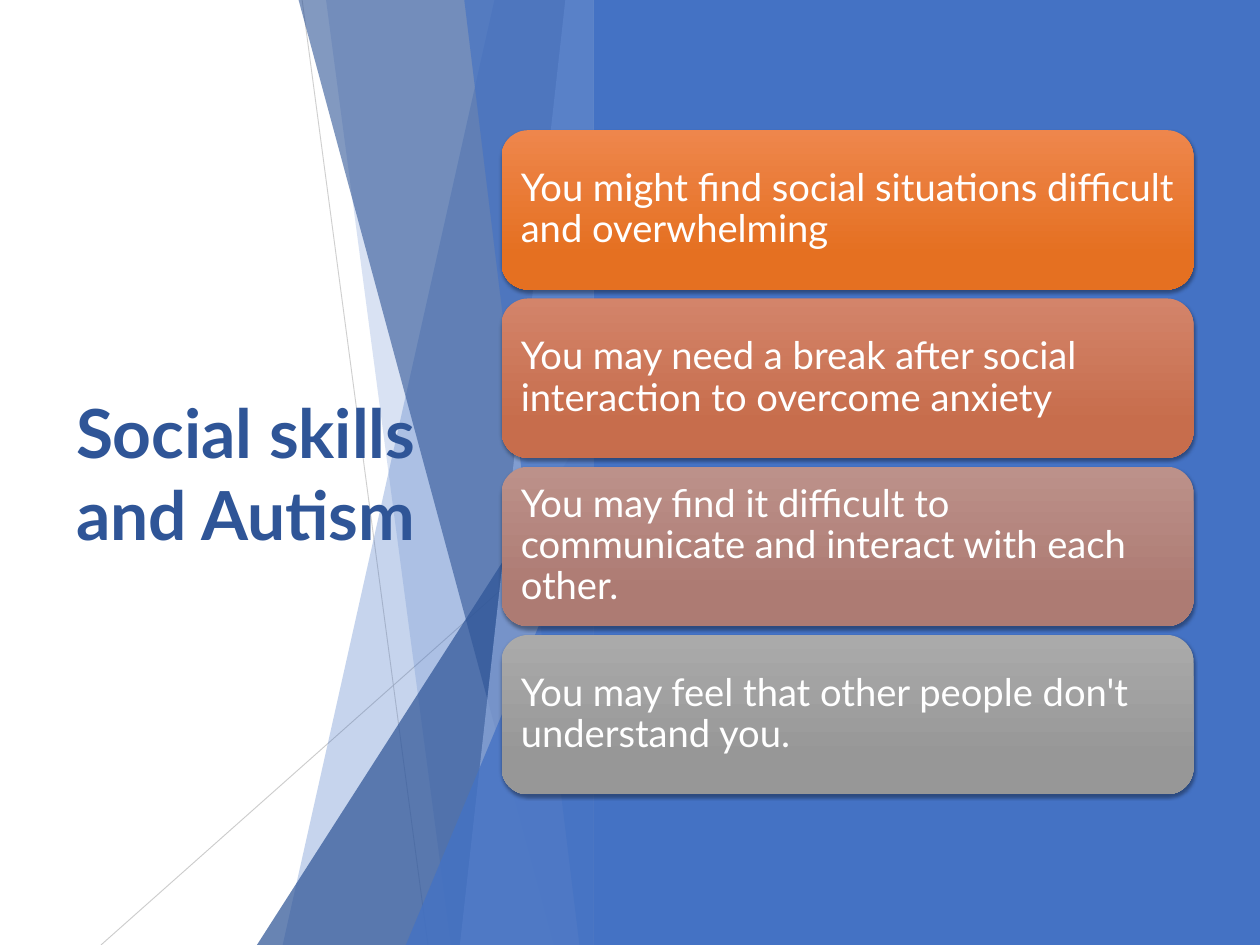
from lxml import etree
from pptx import Presentation
from pptx.dml.color import RGBColor
from pptx.enum.shapes import MSO_CONNECTOR, MSO_SHAPE
from pptx.enum.text import MSO_ANCHOR, PP_ALIGN
from pptx.oxml.ns import qn
from pptx.util import Inches, Pt

STRAIGHT = MSO_CONNECTOR.STRAIGHT
RECT = MSO_SHAPE.RECTANGLE
ROUNDED = MSO_SHAPE.ROUNDED_RECTANGLE
TRIANGLE = MSO_SHAPE.ISOSCELES_TRIANGLE
MIDDLE = MSO_ANCHOR.MIDDLE
LEFT = PP_ALIGN.LEFT

WIDTH, HEIGHT = 14.22, 10.67
PANEL_LEFT = 6.7
BLUE, NAVY, SKY, SILVER, WHITE = "4472C4", "2F5597", "8FAADC", "BFBFBF", "FFFFFF"

RAYS = [
    ((3.41, 0), (4.83, HEIGHT), 75),
    ((PANEL_LEFT, 5.73), (1.14, HEIGHT), 80),
]
BACK_BANDS = [(5.58, 3.19, BLUE, 30), (3.68, 5.09, BLUE, 20)]
FRONT_BANDS = [
    (3.37, 6.25, NAVY, 60),
    (6.38, 5.19, SKY, 70),
    (5.24, 6.54, BLUE, 65),
]
CARD_LEFT, CARD_TOP, CARD_WIDTH, CARD_HEIGHT, CARD_PITCH = 5.66, 1.47, 7.81, 1.8, 1.9
CARDS = [
    ("You might find social situations difficult and overwhelming", "EE864C", "E57021"),
    ("You may need a break after social interaction to overcome anxiety", "D3846A", "C76D4C"),
    ("You may find it difficult to communicate and interact with each other.", "BC918A", "AD7B73"),
    ("You may feel that other people don't understand you.", "AAAAAA", "979797"),
]
TITLE_FONT = {"name": "Lato", "size": Pt(55), "bold": True}
CARD_FONT = {"name": "Lato", "size": Pt(31)}
CARD_MARGINS = {f"margin_{side}": Inches(0.13) for side in ("left", "top", "right", "bottom")}


def rgb(color):
    """Turn a hex string into a colour."""
    return RGBColor.from_string(color)


def set_attrs(target, values):
    """Set each attribute of the target from a dict."""
    for name, value in values.items():
        setattr(target, name, value)


def set_opacity(color, percent):
    """Give a colour element an opacity."""
    etree.SubElement(color, qn("a:alpha"), val=str(percent * 1000))


def fill_plain(sp, color, opacity=100):
    """Fill a shape with one colour, without outline or shadow."""
    sp.shadow.inherit = False
    sp.line.fill.background()
    sp.fill.solid()
    sp.fill.fore_color.rgb = rgb(color)
    if opacity < 100:
        set_opacity(next(sp._element.iter(qn("a:srgbClr"))), opacity)


def add_ray(s, start, end, opacity):
    """Draw a thin translucent line."""
    line = s.shapes.add_connector(STRAIGHT, *(Inches(v) for v in (*start, *end)))
    line.line.width = Pt(0.75)
    line.line.color.rgb = rgb(SILVER)
    set_opacity(next(line._element.iter(qn("a:srgbClr"))), opacity)
    etree.SubElement(line._element.find(qn("p:spPr")), qn("a:effectLst"))


def add_band(s, top_x, bottom_x, color, opacity):
    """Draw a full-height band from a slanted edge to the panel."""
    points = [(PANEL_LEFT, 0), (PANEL_LEFT, HEIGHT), (bottom_x, HEIGHT)]
    builder = s.shapes.build_freeform(Inches(top_x), 0)
    builder.add_line_segments([(Inches(x), Inches(y)) for x, y in points])
    fill_plain(builder.convert_to_shape(), color, opacity)


def add_wedge(s, left, top, color, opacity):
    """Draw a right triangle standing against the panel."""
    sp = s.shapes.add_shape(TRIANGLE, Inches(left), Inches(top),
                            Inches(PANEL_LEFT - left), Inches(HEIGHT - top))
    sp.adjustments[0] = 1
    fill_plain(sp, color, opacity)


def write(sp, text, font, color, frame, paragraph):
    """Write one formatted paragraph into a shape."""
    tf = sp.text_frame
    set_attrs(tf, {"word_wrap": True, "vertical_anchor": MIDDLE, **frame})
    p = tf.paragraphs[0]
    set_attrs(p, {"alignment": LEFT, **paragraph})
    r = p.add_run()
    r.text = text
    set_attrs(r.font, font)
    r.font.color.rgb = rgb(color)


def add_shadow(sp):
    """Give a shape a soft shadow below it."""
    sp.shadow.inherit = False
    effects = sp._element.spPr.find(qn("a:effectLst"))
    shadow = etree.SubElement(effects, qn("a:outerShdw"), blurRad=str(Pt(3)),
                              dist=str(Pt(2)), dir="5400000", rotWithShape="0")
    set_opacity(etree.SubElement(shadow, qn("a:srgbClr"), val="000000"), 35)


def add_card(s, top, text, light, dark):
    """Draw a rounded gradient card with its text."""
    sp = s.shapes.add_shape(ROUNDED, Inches(CARD_LEFT), Inches(top),
                            Inches(CARD_WIDTH), Inches(CARD_HEIGHT))
    sp.line.fill.background()
    sp.fill.gradient()
    sp.fill.gradient_angle = 270
    for stop, position, color in zip(sp.fill.gradient_stops, (0, 0.78), (light, dark)):
        stop.position = position
        stop.color.rgb = rgb(color)
    add_shadow(sp)
    write(sp, text, CARD_FONT, WHITE, CARD_MARGINS, {"line_spacing": 0.9})


def add_title(s, text):
    """Add the slide title."""
    box = s.shapes.add_textbox(Inches(0.76), Inches(2.15), Inches(4.14), Inches(6.37))
    write(box, text, TITLE_FONT, NAVY, {}, {})


def add_panel(s):
    """Draw the blue panel on the right."""
    sp = s.shapes.add_shape(RECT, Inches(PANEL_LEFT), 0,
                            Inches(WIDTH - PANEL_LEFT), Inches(HEIGHT))
    fill_plain(sp, BLUE)


def main():
    """Build the slide and save it."""
    prs = Presentation()
    prs.slide_width, prs.slide_height = Inches(WIDTH), Inches(HEIGHT)
    s = prs.slides.add_slide(prs.slide_layouts[6])
    for ray in RAYS:
        add_ray(s, *ray)
    for band in BACK_BANDS:
        add_band(s, *band)
    add_wedge(s, 2.9, 4.74, NAVY, 72)
    for band in FRONT_BANDS:
        add_band(s, *band)
    add_wedge(s, 4.58, 5.58, BLUE, 80)
    add_title(s, "Social skills and Autism")
    add_panel(s)
    for i, card in enumerate(CARDS):
        add_card(s, CARD_TOP + i * CARD_PITCH, *card)
    prs.save("out.pptx")


if __name__ == "__main__":
    main()
